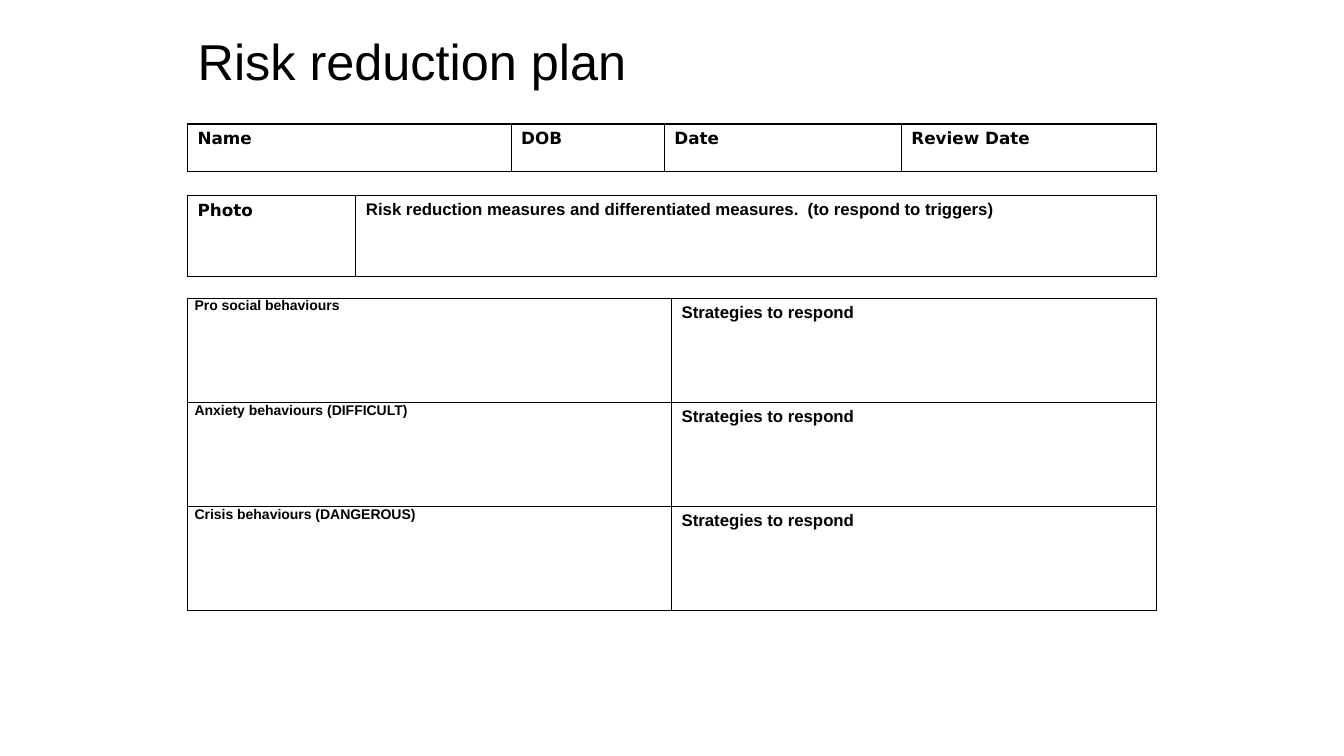
from lxml import etree
from pptx import Presentation
from pptx.dml.color import RGBColor
from pptx.enum.text import MSO_ANCHOR, MSO_AUTO_SIZE, PP_ALIGN
from pptx.oxml.ns import qn
from pptx.util import Inches, Pt

BLACK = RGBColor(0x00, 0x00, 0x00)
SANS = "Arial"
FORM_SANS = "DejaVu Sans"
LEFT = PP_ALIGN.LEFT
TOP = MSO_ANCHOR.TOP
NO_FIT = MSO_AUTO_SIZE.NONE
FORM_LEFT = 1.86
BORDER_SIDES = ("a:lnL", "a:lnR", "a:lnT", "a:lnB")


class PlanSlide:
    """Holds the form's style and the slide it is drawn on."""

    def __init__(self, deck):
        self.slide = deck.slides.add_slide(deck.slide_layouts[5])

    def label(self, frame, wording, size, font, bold):
        paragraph = frame.paragraphs[0]
        paragraph.alignment = LEFT
        run = paragraph.add_run()
        run.text = wording
        run.font.size = Pt(size)
        run.font.name = font
        run.font.bold = bold
        run.font.color.rgb = BLACK

    def title(self, wording):
        heading = self.slide.shapes.title
        heading.left, heading.top = Inches(FORM_LEFT), Inches(0.22)
        heading.width, heading.height = Inches(4.63), Inches(1.01)
        frame = heading.text_frame
        frame.word_wrap = True
        frame.auto_size = NO_FIT
        frame.vertical_anchor = TOP
        frame.margin_top = Inches(0.08)
        self.label(frame, wording, 36, SANS, False)

    def outline(self, cell):
        properties = cell._tc.get_or_add_tcPr()
        for side in BORDER_SIDES:
            line = etree.SubElement(properties, qn(side), w=str(Pt(1)))
            fill = etree.SubElement(line, qn("a:solidFill"))
            etree.SubElement(fill, qn("a:srgbClr"), val=str(BLACK))
        cell.fill.background()

    def form(self, top, height, widths, rows):
        table = self.slide.shapes.add_table(
            len(rows), len(widths), Inches(FORM_LEFT), Inches(top),
            Inches(sum(widths)), Inches(height)).table
        table.first_row = False
        table.horz_banding = False
        for column, width in zip(table.columns, widths):
            column.width = Inches(width)
        for row_index, labels in enumerate(rows):
            for column_index, (wording, size, font, side, above) in enumerate(labels):
                cell = table.cell(row_index, column_index)
                cell.margin_left = cell.margin_right = Inches(side)
                cell.margin_top = cell.margin_bottom = Inches(above)
                self.outline(cell)
                self.label(cell.text_frame, wording, size, font, True)


def field(wording, font=SANS):
    return wording, 12, font, 0.1, 0.05


def behaviour(wording):
    return wording, 10, SANS, 0.07, 0


def main():
    deck = Presentation()
    deck.slide_width, deck.slide_height = Inches(13.33), Inches(7.5)
    plan = PlanSlide(deck)
    plan.title("Risk reduction plan")

    details = [field(label, FORM_SANS) for label in ("Name", "DOB", "Date", "Review Date")]
    plan.form(1.23, 0.47, (3.21, 1.52, 2.35, 2.53), [details])

    measures = "Risk reduction measures and differentiated measures.  (to respond to triggers)"
    plan.form(1.94, 0.8, (1.67, 7.94), [[field("Photo", FORM_SANS), field(measures)]])

    stages = ("Pro social behaviours", "Anxiety behaviours (DIFFICULT)",
              "Crisis behaviours (DANGEROUS)")
    responses = [[behaviour(stage), field("Strategies to respond")] for stage in stages]
    plan.form(2.96, 3.1, (4.8, 4.81), responses)

    deck.save("out.pptx")


if __name__ == "__main__":
    main()
